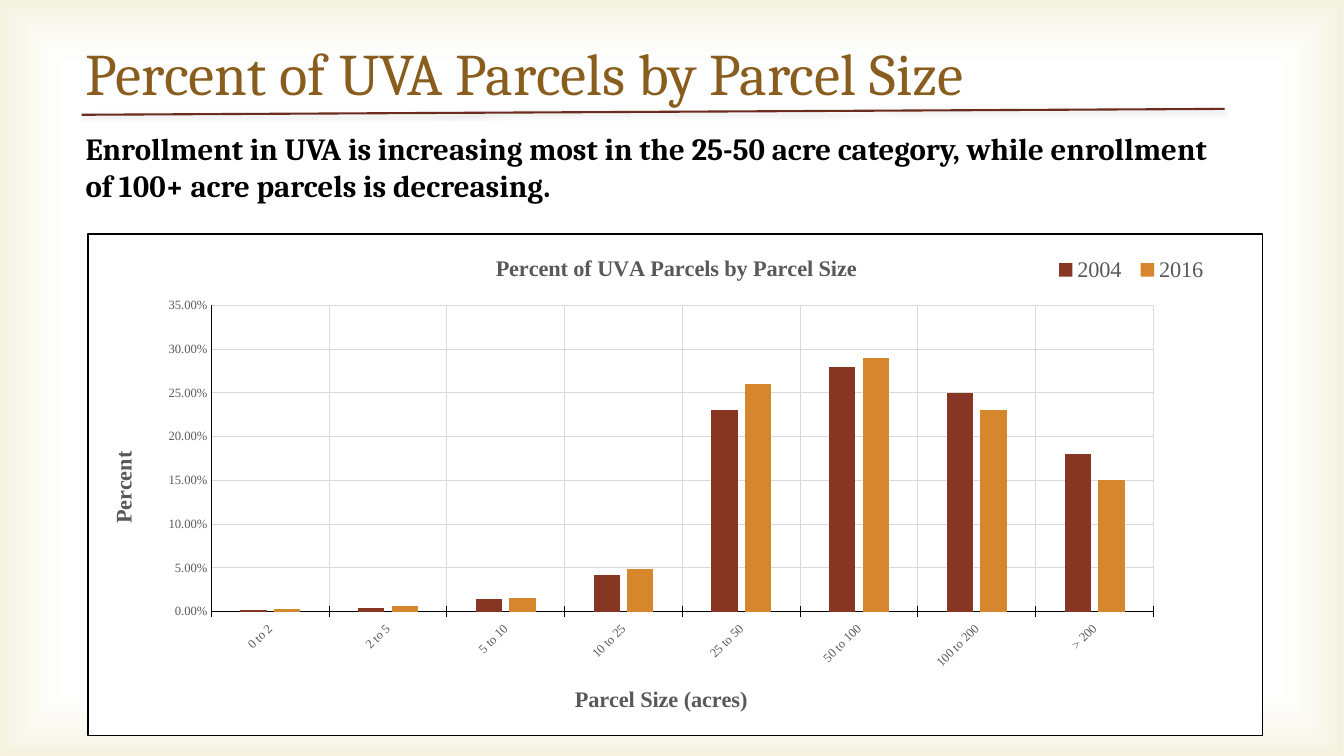
from lxml.etree import SubElement
from pptx import Presentation
from pptx.chart.data import CategoryChartData
from pptx.dml.color import RGBColor
from pptx.enum.chart import XL_CHART_TYPE, XL_LEGEND_POSITION, XL_TICK_MARK
from pptx.enum.shapes import MSO_CONNECTOR, MSO_SHAPE
from pptx.enum.text import MSO_ANCHOR
from pptx.oxml import parse_xml
from pptx.oxml.ns import nsdecls, qn
from pptx.util import Pt

WHITE = RGBColor(0xFF, 0xFF, 0xFF)
BLACK = RGBColor(0, 0, 0)
GRAY = RGBColor(0x59, 0x59, 0x59)
GRID = RGBColor(0xD9, 0xD9, 0xD9)
KHAKI = RGBColor(0xD1, 0xCA, 0x75)
BROWN = RGBColor(0x89, 0x5D, 0x1D)
MAROON = RGBColor(0x6B, 0x2B, 0x1D)
RUST = RGBColor(0x87, 0x36, 0x24)
AMBER = RGBColor(0xD6, 0x86, 0x2D)

SERIF = "Cambria"
TIMES = "Times New Roman"
TITLE = "Percent of UVA Parcels by Parcel Size"
CLAIM = ("Enrollment in UVA is increasing most in the 25-50 acre category, "
         "while enrollment of 100+ acre parcels is decreasing.")
CHART = (62.4, 166.8, 840, 359.3)
SIZES = ["0 to 2", "2 to 5", "5 to 10", "10 to 25",
         "25 to 50", "50 to 100", "100 to 200", "> 200"]
YEARS = [
    ("2004", RUST, [0.002, 0.004, 0.014, 0.042, 0.23, 0.28, 0.25, 0.18]),
    ("2016", AMBER, [0.003, 0.006, 0.016, 0.049, 0.26, 0.29, 0.23, 0.15]),
]


def set_font(font, name, size, color, bold=False):
    font.name, font.size, font.bold = name, Pt(size), bold
    font.color.rgb = color


def add_glow(slide, width, height):
    """Cover the slide with a soft tint that deepens at the edges."""
    rect = slide.shapes.add_shape(MSO_SHAPE.RECTANGLE, 0, 0, width, height)
    rect.shadow.inherit = False
    rect.line.fill.background()
    stops = "".join(
        f'<a:gs pos="{pos}000"><a:srgbClr val="{color}">'
        f'<a:alpha val="{alpha}000"/></a:srgbClr></a:gs>'
        for pos, color, alpha in [(83, WHITE, 11), (100, KHAKI, 23)])
    grad = parse_xml(
        f'<a:gradFill {nsdecls("a")} rotWithShape="1"><a:gsLst>{stops}</a:gsLst>'
        '<a:path path="rect"><a:fillToRect l="50000" t="50000" r="50000" '
        'b="50000"/></a:path></a:gradFill>')
    rect.element.spPr.find(qn("a:prstGeom")).addnext(grad)


def add_text(slide, text, box, size, color, bold=False, anchor=MSO_ANCHOR.TOP):
    frame = slide.shapes.add_textbox(*map(Pt, box)).text_frame
    frame.word_wrap = True
    frame.vertical_anchor = anchor
    frame.text = text
    set_font(frame.paragraphs[0].runs[0].font, SERIF, size, color, bold)


def add_rule(slide, start, end):
    """Draw the line under the title with its faint shadow."""
    rule = slide.shapes.add_connector(
        MSO_CONNECTOR.STRAIGHT, *map(Pt, start + end))
    rule.line.color.rgb = MAROON
    rule.line.width = Pt(1.5)
    rule.element.spPr.append(parse_xml(
        f'<a:effectLst {nsdecls("a")}><a:outerShdw blurRad="{Pt(3)}" '
        f'dist="{Pt(1)}" dir="5400000" rotWithShape="0"><a:srgbClr val="{BLACK}">'
        '<a:alpha val="15000"/></a:srgbClr></a:outerShdw></a:effectLst>'))


def place(part, *box):
    """Pin a chart part at points from the chart's corner."""
    for old in part.findall(qn("c:layout")):
        part.remove(old)
    layout = parse_xml(f'<c:layout {nsdecls("c")}><c:manualLayout/></c:layout>')
    rows = [("xMode", "edge"), ("yMode", "edge")]
    if part.tag == qn("c:plotArea"):
        rows.insert(0, ("layoutTarget", "inner"))
    rows += [(tag, size / full)
             for tag, size, full in zip("xywh", box, CHART[2:] * 2)]
    for tag, val in rows:
        SubElement(layout[0], qn(f"c:{tag}")).set("val", str(val))
    overlay = part.find(qn("c:overlay"))
    if overlay is None:
        part.insert(0, layout)
    else:
        overlay.addprevious(layout)


def set_title(title, text, left, top, turn=0):
    frame = title.text_frame
    frame.text = text
    set_font(frame.paragraphs[0].runs[0].font, TIMES, 16, GRAY, True)
    body = title._element
    next(body.iter(qn("a:bodyPr"))).set("rot", str(turn * 60000))
    place(body, left, top)


def set_axis(axis, tick, turn=0):
    axis.major_tick_mark = tick
    axis.minor_tick_mark = XL_TICK_MARK.NONE
    axis.has_major_gridlines = True
    for line, color in [(axis.format.line, BLACK),
                        (axis.major_gridlines.format.line, GRID)]:
        line.color.rgb = color
        line.width = Pt(0.75)
    set_font(axis.tick_labels.font, TIMES, 9, GRAY)
    body = axis._element.find(qn("c:txPr")).find(qn("a:bodyPr"))
    body.set("rot", str(turn * 60000))


def add_bars(slide):
    data = CategoryChartData(number_format="0.00%")
    data.categories = SIZES
    for name, _, vals in YEARS:
        data.add_series(name, vals)
    chart = slide.shapes.add_chart(
        XL_CHART_TYPE.COLUMN_CLUSTERED, *map(Pt, CHART), data).chart
    set_font(chart.font, TIMES, 10, BLACK)

    # Columns
    plot = chart.plots[0]
    plot.gap_width, plot.overlap = 219, -27
    plot.vary_by_categories = False
    for series, (_, color, _) in zip(plot.series, YEARS):
        series.format.fill.solid()
        series.format.fill.fore_color.rgb = color

    # Axes
    cat, val = chart.category_axis, chart.value_axis
    set_axis(cat, XL_TICK_MARK.CROSS, -45)
    set_axis(val, XL_TICK_MARK.NONE)
    val.minimum_scale, val.maximum_scale, val.major_unit = 0, 0.35, 0.05
    val.tick_labels.number_format = "0.00%"
    val.tick_labels.number_format_is_linked = False

    # Titles
    chart.has_title = True
    set_title(chart.chart_title, TITLE, 288.7, 11)
    set_title(cat.axis_title, "Parcel Size (acres)", 345.3, 320)
    set_title(val.axis_title, "Percent ", 12, 149)

    # Upright value title
    next(val.axis_title._element.iter(qn("a:bodyPr"))).set("rot", "-5400000")

    # Legend
    chart.has_legend = True
    legend = chart.legend
    legend.position = XL_LEGEND_POSITION.RIGHT
    legend.include_in_layout = False
    set_font(legend.font, TIMES, 16, GRAY)
    place(legend._element, 686, 11.2, 120, 28.7)

    # Plot area and frame
    space = chart.element
    place(space.chart.plotArea, 88.2, 51, 673.8, 219.4)
    space.chart.addnext(parse_xml(
        f'<c:spPr {nsdecls("c", "a")}><a:solidFill><a:srgbClr val="{WHITE}"/>'
        f'</a:solidFill><a:ln w="{Pt(1)}"><a:solidFill><a:srgbClr val="{BLACK}"/>'
        '</a:solidFill></a:ln></c:spPr>'))


def main():
    deck = Presentation()
    deck.slide_width, deck.slide_height = Pt(960), Pt(540)
    slide = deck.slides.add_slide(deck.slide_layouts[6])
    add_glow(slide, deck.slide_width, deck.slide_height)
    add_text(slide, TITLE, (54, 10, 900, 83), 42, BROWN,
             anchor=MSO_ANCHOR.MIDDLE)
    add_bars(slide)
    add_text(slide, CLAIM, (54, 89.2, 819.4, 60.5), 22, BLACK, True)
    add_rule(slide, (58.3, 82), (874.8, 77.8))
    deck.save("out.pptx")


if __name__ == "__main__":
    main()
